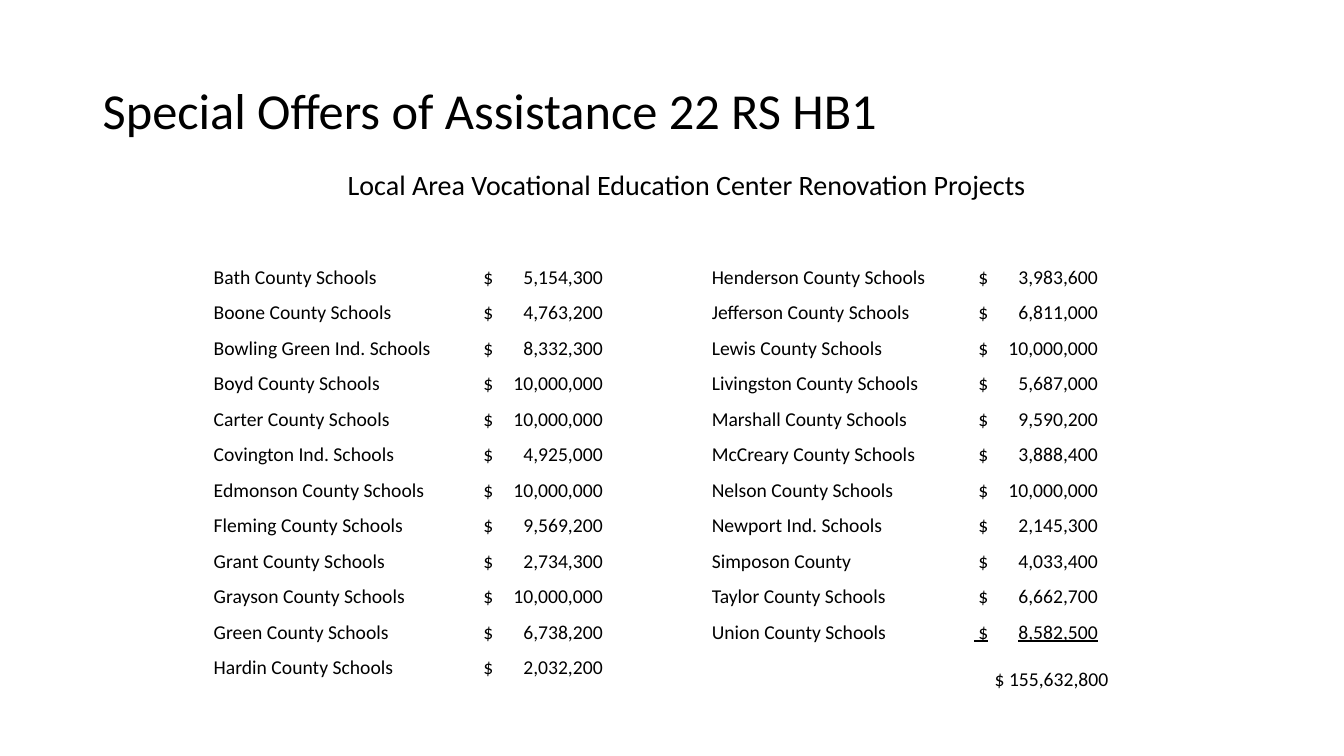
import dataclasses

import lxml.etree
import pptx
import pptx.dml.color
import pptx.enum.text
import pptx.oxml.ns
import pptx.shapes.autoshape
import pptx.slide
import pptx.table
import pptx.text.text
import pptx.util

Inches = pptx.util.Inches
Anchor = pptx.enum.text.MSO_ANCHOR
Align = pptx.enum.text.PP_ALIGN

FONT = "Calibri"
BLACK = "000000"
COLUMN_WIDTHS = (2.63, 1.56, 0.75, 2.6, 1.56)
ROW_COUNT = 13
TABLE_HEIGHT = 4.58
AMOUNT_TAB = 1.23
TOTAL = "$ 155,632,800"


@dataclasses.dataclass(frozen=True)
class Project:
    school: str
    amount: int


@dataclasses.dataclass(frozen=True)
class Heading:
    text: str
    left: float
    top: float
    width: float
    height: float
    size: float
    anchor: Anchor
    alignment: Align


HEADINGS = (
    Heading("Special Offers of Assistance 22 RS HB1",
            0.92, 0.4, 11.5, 1.45, 36, Anchor.MIDDLE, Align.LEFT),
    Heading("Local Area Vocational Education Center Renovation Projects",
            0.92, 1.65, 11.78, 0.6, 20, Anchor.TOP, Align.CENTER),
)

LEFT_PROJECTS = (
    Project("Bath County Schools", 5154300),
    Project("Boone County Schools", 4763200),
    Project("Bowling Green Ind. Schools", 8332300),
    Project("Boyd County Schools", 10000000),
    Project("Carter County Schools", 10000000),
    Project("Covington Ind. Schools", 4925000),
    Project("Edmonson County Schools", 10000000),
    Project("Fleming County Schools", 9569200),
    Project("Grant County Schools", 2734300),
    Project("Grayson County Schools", 10000000),
    Project("Green County Schools", 6738200),
    Project("Hardin County Schools", 2032200),
)

RIGHT_PROJECTS = (
    Project("Henderson County Schools", 3983600),
    Project("Jefferson County Schools", 6811000),
    Project("Lewis County Schools", 10000000),
    Project("Livingston County Schools", 5687000),
    Project("Marshall County Schools", 9590200),
    Project("McCreary County Schools", 3888400),
    Project("Nelson County Schools", 10000000),
    Project("Newport Ind. Schools", 2145300),
    Project("Simposon County", 4033400),
    Project("Taylor County Schools", 6662700),
    Project("Union County Schools", 8582500),
)


def color(value: str) -> pptx.dml.color.RGBColor:
    return pptx.dml.color.RGBColor.from_string(value)


def write(paragraph: pptx.text.text._Paragraph, text: str, size: float) -> None:
    paragraph.text = text
    for run in paragraph.runs:
        run.font.name = FONT
        run.font.size = pptx.util.Pt(size)
        run.font.color.rgb = color(BLACK)


def add_heading(slide: pptx.slide.Slide, heading: Heading) -> None:
    shape = slide.shapes.add_textbox(
        Inches(heading.left), Inches(heading.top),
        Inches(heading.width), Inches(heading.height))
    shape.text_frame.word_wrap = True
    shape.text_frame.vertical_anchor = heading.anchor
    paragraph = shape.text_frame.paragraphs[0]
    write(paragraph, heading.text, heading.size)
    paragraph.alignment = heading.alignment
    paragraph.line_spacing = 0.9


def add_right_tab(paragraph: pptx.text.text._Paragraph, position: float) -> None:
    properties = paragraph._p.get_or_add_pPr()
    tabs = lxml.etree.SubElement(properties, pptx.oxml.ns.qn("a:tabLst"))
    tab = lxml.etree.SubElement(tabs, pptx.oxml.ns.qn("a:tab"))
    tab.set("pos", str(Inches(position)))
    tab.set("algn", "r")


def add_project_table(slide: pptx.slide.Slide) -> pptx.table.Table:
    table = slide.shapes.add_table(
        ROW_COUNT, len(COLUMN_WIDTHS), Inches(2.11), Inches(2.52),
        Inches(sum(COLUMN_WIDTHS)), Inches(TABLE_HEIGHT)).table
    table.first_row = False
    table.horz_banding = False
    for column, width in zip(table.columns, COLUMN_WIDTHS):
        column.width = Inches(width)
    for row in table.rows:
        row.height = Inches(TABLE_HEIGHT / ROW_COUNT)
    for cell in table.iter_cells():
        cell.fill.background()
        cell.vertical_anchor = Anchor.BOTTOM
        cell.margin_left = cell.margin_right = cell.margin_top = Inches(0.01)
        cell.margin_bottom = 0
    return table


def fill_projects(table: pptx.table.Table, projects: tuple[Project, ...],
                  first_column: int) -> None:
    for index, project in enumerate(projects):
        school = table.cell(index, first_column).text_frame.paragraphs[0]
        write(school, project.school, 14)
        amount = table.cell(index, first_column + 1).text_frame.paragraphs[0]
        write(amount, f" $\t{project.amount:,}", 14)
        add_right_tab(amount, AMOUNT_TAB)


def add_total(table: pptx.table.Table) -> None:
    last_amount = table.cell(len(RIGHT_PROJECTS) - 1, 4)
    last_amount.text_frame.paragraphs[0].runs[0].font.underline = True
    total = table.cell(len(RIGHT_PROJECTS), 4)
    total.merge(table.cell(ROW_COUNT - 1, 4))
    total.vertical_anchor = Anchor.MIDDLE
    paragraph = total.text_frame.paragraphs[0]
    write(paragraph, TOTAL, 14)
    paragraph.alignment = Align.CENTER


def main() -> None:
    presentation = pptx.Presentation()
    presentation.slide_width = Inches(13.33)
    presentation.slide_height = Inches(7.5)
    slide = presentation.slides.add_slide(presentation.slide_layouts[6])
    for heading in HEADINGS:
        add_heading(slide, heading)
    table = add_project_table(slide)
    fill_projects(table, LEFT_PROJECTS, 0)
    fill_projects(table, RIGHT_PROJECTS, 3)
    add_total(table)
    presentation.save("out.pptx")


if __name__ == "__main__":
    main()
